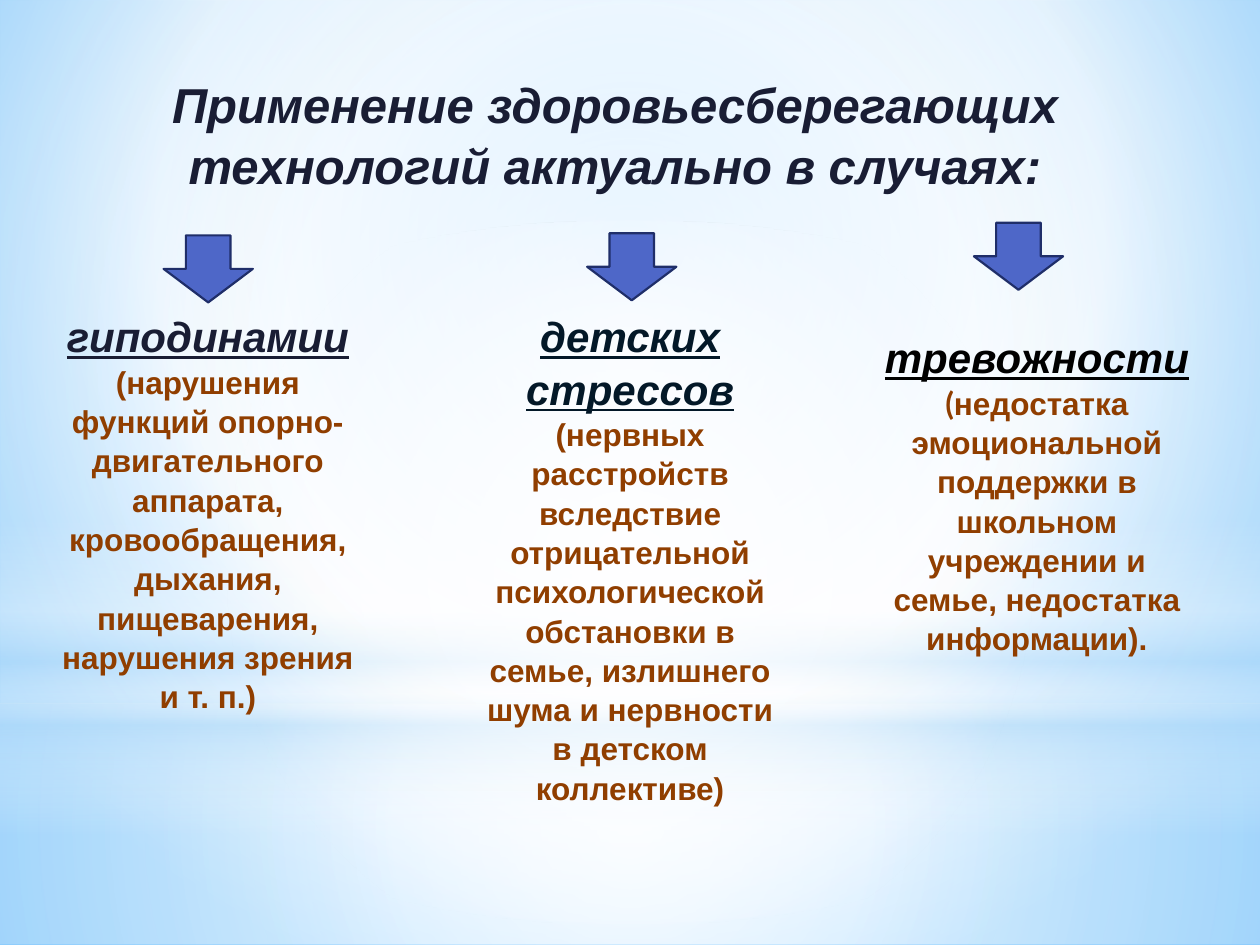
from lxml.etree import SubElement
from pptx import Presentation
from pptx.dml.color import RGBColor
from pptx.enum.shapes import MSO_SHAPE
from pptx.enum.text import MSO_ANCHOR, MSO_AUTO_SIZE, PP_ALIGN
from pptx.oxml.ns import qn
from pptx.util import Pt

NAVY = "191D34"
BROWN = "903E00"
COLUMNS = [
    (28, 173, 181.5, NAVY, "гиподинамии",
     [(" (нарушения функций опорно-двигательного аппарата, кровообращения, "
       "дыхания, пищеварения, нарушения зрения и т. п.)", "Arial")]),
    (269.3, 173, 181.5, "031828", "детских стрессов",
     [(" (нервных расстройств вследствие отрицательной психологической "
       "обстановки в семье, излишнего шума и нервности в детском коллективе)",
       "Arial")]),
    (496, 185, 193, "000000", "тревожности",
     [(" (", "Lato"),
      ("недостатка эмоциональной поддержки в школьном учреждении и семье, "
       "недостатка информации).", "Arial")]),
]
ARROWS = [(93.5, 134.5), (335.5, 133.3), (556.5, 127.3)]
CENTER = (50, 50, 50, 50)
GLOWS = [
    (MSO_SHAPE.RECTANGLE, (0, 402, 720, 138),
     [(0, "FFFFFF", 91), (37, "FFFFFF", 76), (100, "B4DCFA", 79)], CENTER),
    (MSO_SHAPE.RECTANGLE, (0, 0, 720, 402),
     [(0, "FFFFFF", 89), (48, "FFFFFF", 62), (100, "B4DCFA", 79)], CENTER),
    (MSO_SHAPE.RECTANGLE, (0, 297, 720, 180),
     [(0, "FFFFFF", 0), (29, "FFFFFF", 30), (45, "B4DCFA", 40),
      (55, "FFFFFF", 26), (65, "B4DCFA", 60), (100, "FFFFFF", 0)], None),
    (MSO_SHAPE.OVAL, (0, 126, 720, 402),
     [(0, "FFFFFF", 100), (56, "FFFFFF", 0)], CENTER),
]


def rgb(color):
    return RGBColor.from_string(color)


def set_gradient(fill, element, stops, focus=None):
    fill.gradient()
    grad = next(element.iter(qn("a:gradFill")))
    for child in list(grad):
        grad.remove(child)
    stop_list = SubElement(grad, qn("a:gsLst"))
    for pos, color, alpha in stops:
        stop = SubElement(stop_list, qn("a:gs"), pos=str(pos * 1000))
        clr = SubElement(stop, qn("a:srgbClr"), val=color)
        if alpha < 100:
            SubElement(clr, qn("a:alpha"), val=str(alpha * 1000))
    if focus:
        radial = SubElement(grad, qn("a:path"), path="circle")
        edges = {k: str(v * 1000) for k, v in zip("ltrb", focus)}
        SubElement(radial, qn("a:fillToRect"), **edges)
    else:
        SubElement(grad, qn("a:lin"), ang="5400000", scaled="0")


def add_preset(s, kind, box):
    sp = s.shapes.add_shape(kind, *map(Pt, box))
    sp.shadow.inherit = False
    return sp


def add_glow(s, kind, box, stops, focus):
    sp = add_preset(s, kind, box)
    set_gradient(sp.fill, sp.element, stops, focus)
    sp.line.fill.background()


def add_arrow(s, left, top):
    sp = add_preset(s, MSO_SHAPE.DOWN_ARROW, (left, top, 51, 38.3))
    sp.fill.solid()
    sp.fill.fore_color.rgb = rgb("4E67C8")
    sp.line.color.rgb = rgb("1F2E69")
    sp.line.width = Pt(1.25)


def add_run(p, text, size=18, font="Arial", color=BROWN, italic=False,
            underline=False):
    r = p.add_run()
    r.text = text
    r.font.size = Pt(size)
    r.font.name = font
    r.font.bold = True
    r.font.italic = italic
    r.font.underline = underline
    r.font.color.rgb = rgb(color)


def prepare_text(sp):
    tf = sp.text_frame
    tf.word_wrap = True
    tf.auto_size = MSO_AUTO_SIZE.NONE
    tf.vertical_anchor = MSO_ANCHOR.TOP
    p = tf.paragraphs[0]
    p.alignment = PP_ALIGN.CENTER
    p.line_spacing = 1.04
    return p


def add_title(s):
    sp = s.shapes.title
    sp.left, sp.top, sp.width, sp.height = map(Pt, (36.7, 37.4, 629.3, 108.7))
    p = prepare_text(sp)
    add_run(p, "Применение здоровьесберегающих технологий актуально в случаях:",
            size=28, color=NAVY, italic=True)


def add_column(s, left, top, width, color, heading, details):
    height = {28: 240, 269.3: 283.7}.get(left, 189.4)
    sp = s.shapes.add_textbox(Pt(left), Pt(top), Pt(width), Pt(height))
    p = prepare_text(sp)
    add_run(p, heading, size=24, color=color, italic=True, underline=True)
    for text, font in details:
        add_run(p, text, font=font)


def main():
    prs = Presentation()
    prs.slide_width, prs.slide_height = Pt(720), Pt(540)
    s = prs.slides.add_slide(prs.slide_layouts[5])
    set_gradient(s.background.fill, s.element,
                 [(0, "9ED5FF", 100), (60, "FFFFFF", 100), (100, "5BB9FF", 100)],
                 (20, 10, 20, 60))
    for glow in GLOWS:
        add_glow(s, *glow)
    title = s.shapes.title.element
    title.getparent().append(title)
    add_title(s)
    for column in COLUMNS:
        add_column(s, *column)
    for left, top in ARROWS:
        add_arrow(s, left, top)
    prs.save("out.pptx")


if __name__ == "__main__":
    main()
